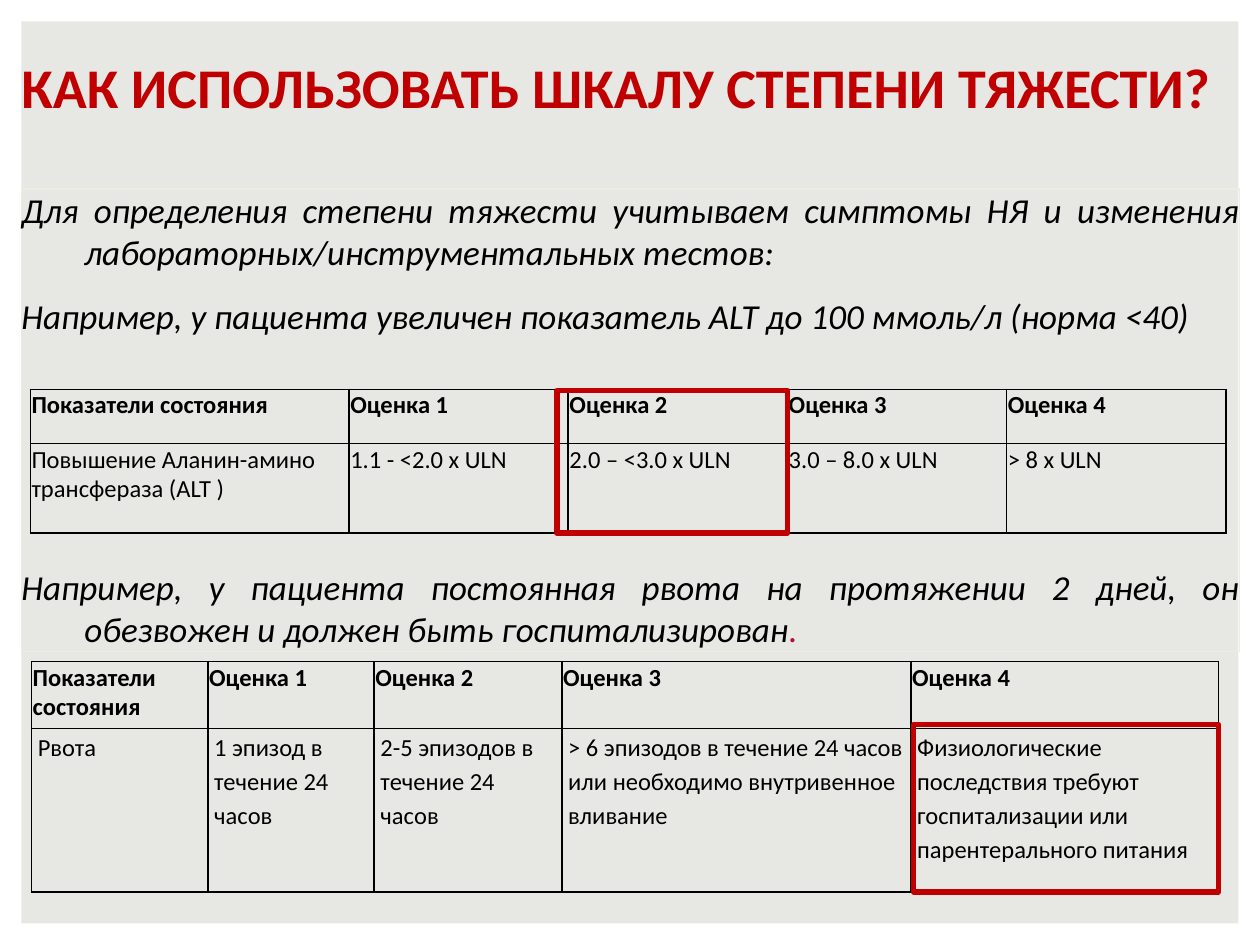
from lxml.etree import SubElement
from pptx import Presentation
from pptx.dml.color import RGBColor
from pptx.enum.shapes import MSO_SHAPE
from pptx.enum.text import MSO_ANCHOR, PP_ALIGN
from pptx.oxml.ns import qn
from pptx.util import Inches, Pt

FONT = "Calibri"
INK, RED, PANEL = "000000", "C00000", "E7E7E4"

TITLE = "КАК ИСПОЛЬЗОВАТЬ ШКАЛУ СТЕПЕНИ ТЯЖЕСТИ?"
# Each paragraph: text, space before in points (the last clears the first table)
PARAGRAPHS = [
    ("Для определения степени тяжести учитываем симптомы НЯ и изменения "
     "лабораторных/инструментальных тестов:", 6),
    ("Например, у пациента увеличен показатель ALT до 100 ммоль/л (норма <40)", 6),
    ("Например, у пациента постоянная рвота на протяжении 2 дней, он "
     "обезвожен и должен быть госпитализирован", 125),
]
HEADER = ["Показатели состояния"] + [f"Оценка {n}" for n in range(1, 5)]
ALT_GRADES = ["Повышение Аланин-амино трансфераза (ALT )", "1.1 - <2.0 x ULN",
              "2.0 – <3.0 x ULN", "3.0 – 8.0 x ULN", "> 8 x ULN"]
VOMIT_GRADES = ["Рвота", "1 эпизод в течение 24 часов",
                "2-5 эпизодов в течение 24 часов",
                "> 6 эпизодов в течение 24 часов или необходимо внутривенное вливание",
                "Физиологические последствия требуют госпитализации или "
                "парентерального питания"]


def rgb(value):
    return RGBColor.from_string(value)


def inches(box):
    return [Inches(v) for v in box]


def set_font(font, size, color=INK, bold=False, italic=False):
    font.name, font.size = FONT, Pt(size)
    font.bold, font.italic = bold, italic
    font.color.rgb = rgb(color)


def clear_margins(tf):
    tf.margin_left = tf.margin_right = tf.margin_top = tf.margin_bottom = 0
    tf.word_wrap = True
    tf.vertical_anchor = MSO_ANCHOR.TOP


def add_rect(s, box, fill=None, line=None, width=3):
    sp = s.shapes.add_shape(MSO_SHAPE.RECTANGLE, *inches(box))
    sp.shadow.inherit = False
    if fill:
        sp.fill.solid()
        sp.fill.fore_color.rgb = rgb(fill)
    else:
        sp.fill.background()
    if line:
        sp.line.color.rgb = rgb(line)
        sp.line.width = Pt(width)
    else:
        sp.line.fill.background()
    return sp


def add_panel(s, box):
    panel = add_rect(s, box, fill=PANEL)
    s.shapes._spTree.insert(2, panel._element)  # behind the title


def place_title(s, box):
    title = s.shapes.title
    title.left, title.top, title.width, title.height = inches(box)
    tf = title.text_frame
    clear_margins(tf)
    p = tf.paragraphs[0]
    p.text = TITLE
    p.alignment = PP_ALIGN.LEFT
    set_font(p.font, 32, RED, bold=True)


def add_body(s, box):
    sp = s.shapes.add_textbox(*inches(box))
    sp.line.color.rgb = rgb("EEECE1")
    sp.line.width = Pt(0.75)
    tf = sp.text_frame
    clear_margins(tf)
    for i, (text, before) in enumerate(PARAGRAPHS):
        p = tf.paragraphs[0] if i == 0 else tf.add_paragraph()
        p.alignment = PP_ALIGN.JUSTIFY
        p.space_before, p.space_after = Pt(before), Pt(6)
        pPr = p._p.get_or_add_pPr()
        pPr.set("marL", str(Inches(0.5)))
        pPr.set("indent", str(-Inches(0.5)))  # hanging indent
        set_font(p.font, 20, italic=True)
        p.add_run().text = text
    r = p.add_run()
    r.text = "."
    r.font.color.rgb = rgb("B90C2E")


def border_cell(cell):
    tcPr = cell._tc.get_or_add_tcPr()
    for i, side in enumerate(("lnL", "lnR", "lnT", "lnB")):
        ln = tcPr.makeelement(qn(f"a:{side}"), {"w": str(Pt(1))})
        fill = SubElement(ln, qn("a:solidFill"))
        SubElement(fill, qn("a:srgbClr"), val=INK)
        tcPr.insert(i, ln)


def add_grade_table(s, left, top, widths, heights, grades, roomy=False):
    box = (left, top, sum(widths), sum(heights))
    table = s.shapes.add_table(2, len(widths), *inches(box)).table
    table.first_row = table.horz_banding = False
    for column, width in zip(table.columns, widths):
        column.width = Inches(width)
    for row, height in zip(table.rows, heights):
        row.height = Inches(height)
    for i, texts in enumerate((HEADER, grades)):
        spaced = roomy and i == 1
        for j, text in enumerate(texts):
            cell = table.cell(i, j)
            cell.fill.background()
            border_cell(cell)
            cell.margin_left = cell.margin_right = Inches(0.05 if spaced else 0.01)
            cell.margin_top = Inches(0 if spaced else 0.01)
            cell.margin_bottom = 0
            p = cell.text_frame.paragraphs[0]
            p.text = text
            set_font(p.font, 14, bold=i == 0)
            if spaced:
                p.line_spacing = 1.15
                p.space_before = p.space_after = Pt(2)


def main():
    prs = Presentation()
    prs.slide_width, prs.slide_height = Inches(10), Inches(7.5)
    s = prs.slides.add_slide(prs.slide_layouts[5])

    # Background, title and text
    add_panel(s, (0.17, 0.17, 9.66, 7.16))
    place_title(s, (0.17, 0.42, 9.58, 0.83))
    add_body(s, (0.17, 1.5, 9.67, 3.67))

    # ALT example, grade 2 marked
    add_grade_table(s, 0.24, 3.09, [2.53] + [1.74] * 4, [0.43, 0.71], ALT_GRADES)
    add_rect(s, (4.42, 3.1, 1.83, 1.13), line=RED)

    # Vomiting example, grade 4 marked
    add_grade_table(s, 0.25, 5.25, [1.4, 1.32, 1.49, 2.77, 2.44], [0.53, 1.3],
                    VOMIT_GRADES, roomy=True)
    add_rect(s, (7.25, 5.75, 2.42, 1.33), line=RED)

    prs.save("out.pptx")


if __name__ == "__main__":
    main()
